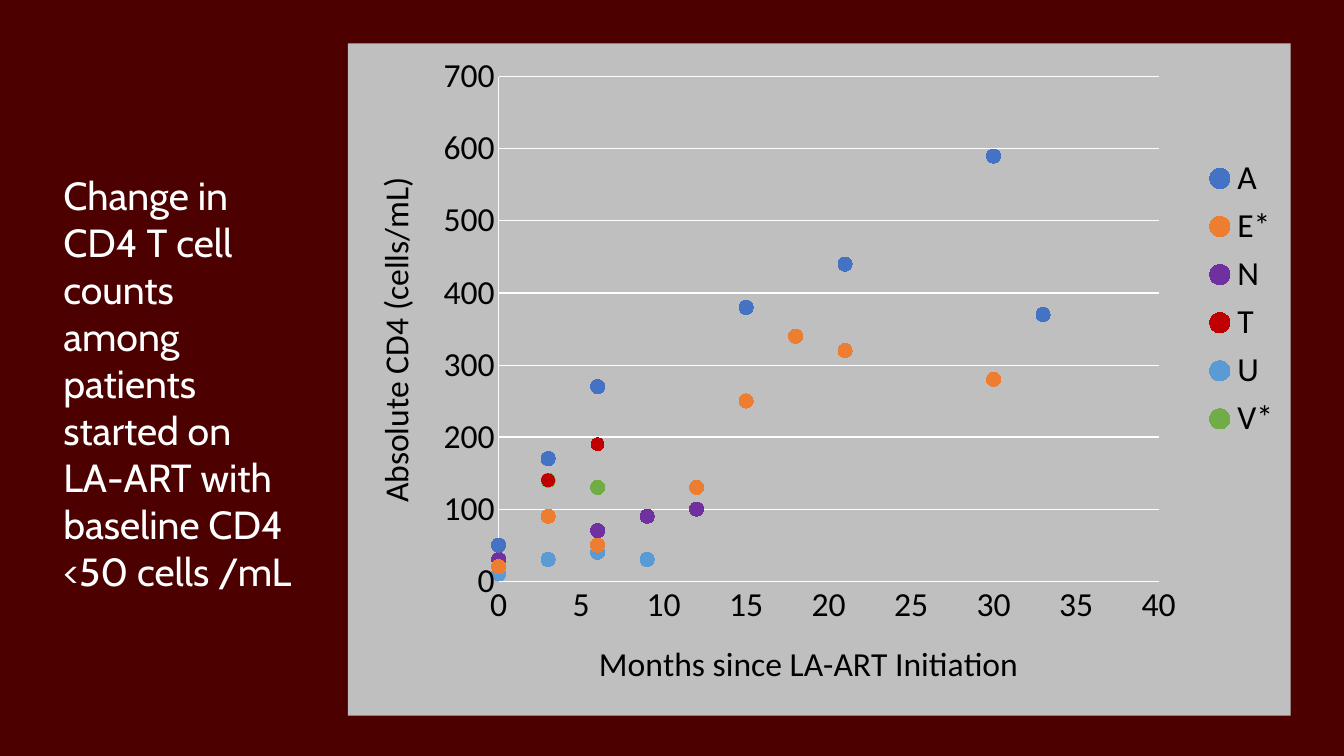
from lxml import etree
from pptx import Presentation
from pptx.chart.data import XyChartData
from pptx.dml.color import RGBColor
from pptx.enum.chart import XL_CHART_TYPE, XL_LEGEND_POSITION, XL_MARKER_STYLE, XL_TICK_MARK
from pptx.enum.text import MSO_ANCHOR
from pptx.oxml import parse_xml
from pptx.oxml.ns import nsdecls, qn
from pptx.util import Inches, Pt

MAROON = RGBColor(0x4C, 0x00, 0x00)
WHITE = RGBColor(0xFF, 0xFF, 0xFF)
BLACK = RGBColor(0x00, 0x00, 0x00)
BLUE = RGBColor(0x44, 0x72, 0xC4)
ORANGE = RGBColor(0xED, 0x7D, 0x31)
PURPLE = RGBColor(0x70, 0x30, 0xA0)
RED = RGBColor(0xC0, 0x00, 0x00)
LIGHT_BLUE = RGBColor(0x5B, 0x9B, 0xD5)
GREEN = RGBColor(0x70, 0xAD, 0x47)

MONTHS = range(0, 37, 3)
# Patient: marker colour, marker size, CD4 count by month
PATIENTS = {
    "A": (BLUE, 10, {0: 50, 3: 170, 6: 270, 15: 380, 21: 440, 30: 590, 33: 370}),
    "E*": (ORANGE, 10, {0: 20, 3: 90, 6: 50, 12: 130, 15: 250, 18: 340, 21: 320, 30: 280}),
    "N": (PURPLE, 10, {0: 30, 3: 90, 6: 70, 9: 90, 12: 100}),
    "T": (RED, 9, {0: 30, 3: 140, 6: 190}),
    "U": (LIGHT_BLUE, 10, {0: 10, 3: 30, 6: 40, 9: 30}),
    "V*": (GREEN, 10, {0: 20, 3: 140, 6: 130}),
}


def set_layout(element, index, inner=False, **fractions):
    """Place a chart part by fractions (x, y, w, h) of the chart area."""
    for old in element.findall(qn("c:layout")):
        element.remove(old)
    layout = parse_xml(f"<c:layout {nsdecls('c')}><c:manualLayout/></c:layout>")
    settings = {"layoutTarget": "inner"} if inner else {}
    settings |= {"xMode": "edge", "yMode": "edge"} | fractions
    for name, value in settings.items():
        etree.SubElement(layout[0], qn(f"c:{name}")).set("val", str(value))
    element.insert(index, layout)


def style_font(font, size, name, color):
    font.size = Pt(size)
    font.name = name
    font.bold = False
    font.color.rgb = color


deck = Presentation()
deck.slide_width = Inches(13.33)
deck.slide_height = Inches(7.5)
page = deck.slides.add_slide(deck.slide_layouts[6])
page.background.fill.solid()
page.background.fill.fore_color.rgb = MAROON

# Caption
box = page.shapes.add_textbox(Inches(0.53), Inches(1.62), Inches(2.5), Inches(4.36))
box.text_frame.word_wrap = True
box.text_frame.vertical_anchor = MSO_ANCHOR.MIDDLE
span = box.text_frame.paragraphs[0].add_run()
span.text = "Change in CD4 T cell counts among patients started on LA-ART with baseline CD4 <50 cells /mL"
style_font(span.font, 28, "Cabin", WHITE)

# Scatter chart: every patient has all months, some without a count
data = XyChartData()
for patient, (color, size, counts) in PATIENTS.items():
    points = data.add_series(patient)
    for month in MONTHS:
        points.add_data_point(month, counts.get(month))
chart = page.shapes.add_chart(
    XL_CHART_TYPE.XY_SCATTER, Inches(3.45), Inches(0.43), Inches(9.35), Inches(6.67), data
).chart
chart_space = chart._chartSpace
for value in list(chart_space.iter(qn("c:v"))):
    if value.text in (None, "", "None"):
        point = value.getparent()
        point.getparent().remove(point)
chart.has_title = False
style_font(chart.font, 24, "Calibri", BLACK)
plot = chart.plots[0]
plot.vary_by_categories = False

for series, (color, size, counts) in zip(plot.series, PATIENTS.values()):
    series.smooth = False
    series.format.line.fill.background()
    marker = series.marker
    marker.style = XL_MARKER_STYLE.CIRCLE
    marker.size = size
    marker.format.fill.solid()
    marker.format.fill.fore_color.rgb = color
    marker.format.line.color.rgb = color

# Axes: title, maximum, step, title position
month_axis, count_axis = chart.category_axis, chart.value_axis
for axis, title, maximum, step, x, y in (
    (month_axis, "Months since LA-ART Initiation", 40, 5, 0.26, 0.88),
    (count_axis, "Absolute CD4 (cells/mL)", 700, 100, 0.02, 0.19),
):
    axis.minimum_scale, axis.maximum_scale, axis.major_unit = 0, maximum, step
    axis.major_tick_mark = axis.minor_tick_mark = XL_TICK_MARK.NONE
    axis.has_major_gridlines = axis is count_axis
    axis.format.line.color.rgb = WHITE
    axis.format.line.width = Pt(0.75)
    style_font(axis.tick_labels.font, 24, "Calibri", BLACK)
    axis.tick_labels.number_format = "General"
    axis.tick_labels.number_format_is_linked = False
    span = axis.axis_title.text_frame.paragraphs[0].add_run()
    span.text = title
    style_font(span.font, 24, "Calibri", BLACK)
    set_layout(axis.axis_title._element, 1, x=x, y=y)

gridline = count_axis.major_gridlines.format.line
gridline.color.rgb = WHITE
gridline.width = Pt(0.75)
title_body = count_axis.axis_title._element.find(".//" + qn("a:bodyPr"))
title_body.set("rot", "-5400000")
title_body.set("vert", "horz")

chart.has_legend = True
chart.legend.position = XL_LEGEND_POSITION.RIGHT
chart.legend.include_in_layout = False
style_font(chart.legend.font, 24, "Calibri", BLACK)
set_layout(chart.legend._element, 1, x=0.91, y=0.16, w=0.08, h=0.44)

set_layout(chart_space.chart.plotArea, 0, inner=True, x=0.16, y=0.05, w=0.7, h=0.75)
chart_space.chart.addnext(parse_xml(
    f'<c:spPr {nsdecls("c", "a")}><a:solidFill><a:srgbClr val="BFBFBF"/></a:solidFill>'
    "<a:ln><a:noFill/></a:ln></c:spPr>"
))

deck.save("out.pptx")
